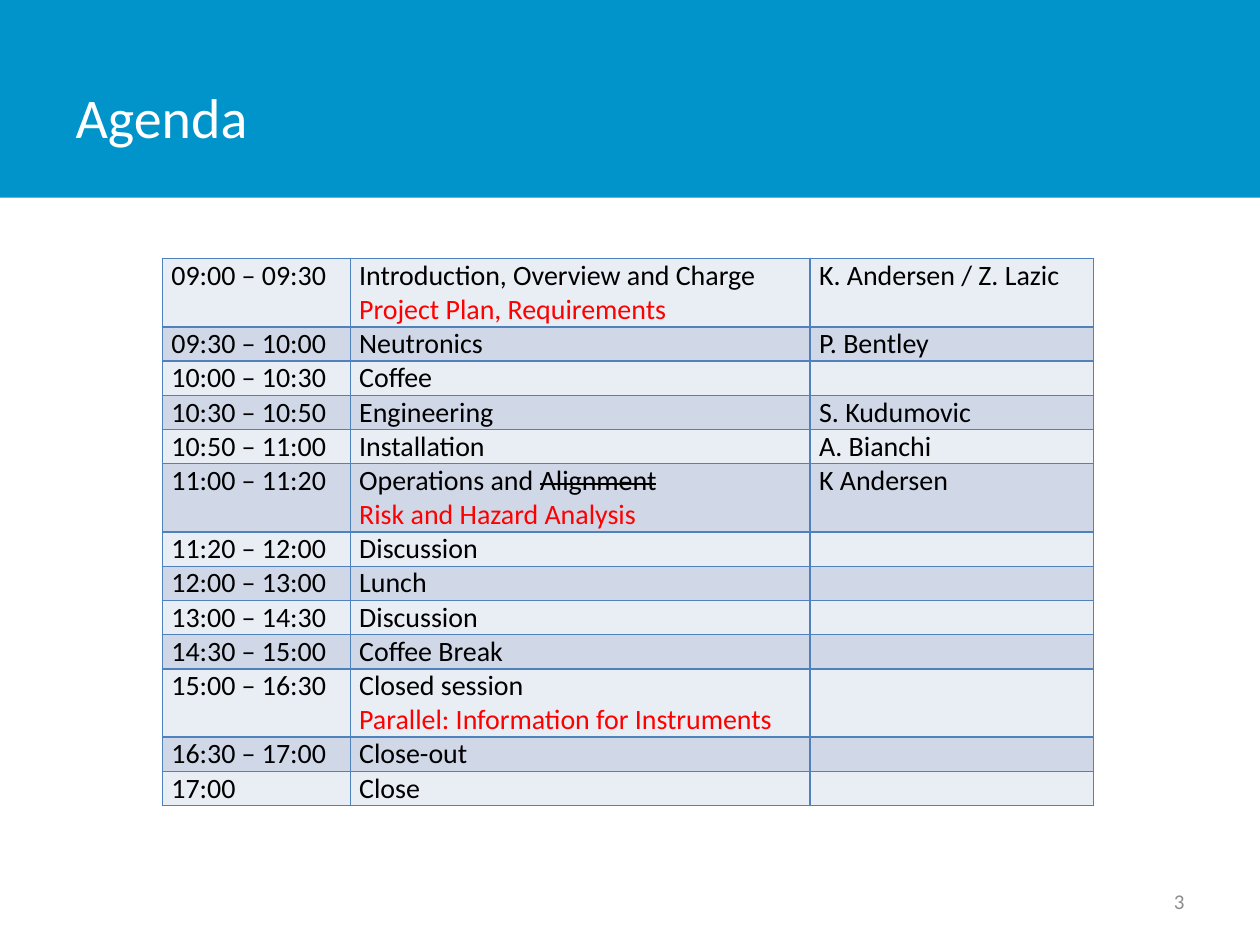
import pptx
import pptx.dml.color
import pptx.enum.shapes
import pptx.enum.text
import pptx.oxml.ns
import pptx.util
from lxml import etree

Pt = pptx.util.Pt
Color = pptx.dml.color.RGBColor.from_string
Align = pptx.enum.text.PP_ALIGN
Anchor = pptx.enum.text.MSO_ANCHOR
qn = pptx.oxml.ns.qn


class Theme:
    font = "Calibri"
    title_size, table_size, number_size = 32, 16, 12
    band, white, black = "0094CA", "FFFFFF", "000000"
    change, number, border = "FF0000", "8C8C8C", "4F81BD"
    stripes = ("E9EDF4", "D0D8E8")


def add_span(para, text, size, color):
    span = para.add_run()
    span.text = text
    span.font.name = Theme.font
    span.font.size = Pt(size)
    span.font.color.rgb = Color(color)
    return span


def add_borders(cell):
    properties = cell._tc.get_or_add_tcPr()
    for side in ("lnL", "lnR", "lnT", "lnB"):
        line = etree.SubElement(properties, qn(f"a:{side}"), w=str(Pt(1)))
        fill = etree.SubElement(line, qn("a:solidFill"))
        etree.SubElement(fill, qn("a:srgbClr"), val=Theme.border)


# Time, topic, struck-out words, late change, speaker
agenda = [
    ("09:00 – 09:30", "Introduction, Overview and Charge", "",
     "Project Plan, Requirements", "K. Andersen / Z. Lazic"),
    ("09:30 – 10:00", "Neutronics", "", "", "P. Bentley"),
    ("10:00 – 10:30", "Coffee", "", "", ""),
    ("10:30 – 10:50", "Engineering", "", "", "S. Kudumovic"),
    ("10:50 – 11:00", "Installation", "", "", "A. Bianchi"),
    ("11:00 – 11:20", "Operations and ", "Alignment",
     "Risk and Hazard Analysis", "K Andersen"),
    ("11:20 – 12:00", "Discussion", "", "", ""),
    ("12:00 – 13:00", "Lunch", "", "", ""),
    ("13:00 – 14:30", "Discussion", "", "", ""),
    ("14:30 – 15:00", "Coffee Break", "", "", ""),
    ("15:00 – 16:30", "Closed session", "",
     "Parallel: Information for Instruments", ""),
    ("16:30 – 17:00", "Close-out", "", "", ""),
    ("17:00", "Close", "", "", ""),
]

deck = pptx.Presentation()
deck.slide_width, deck.slide_height = Pt(720), Pt(540)
page = deck.slides.add_slide(deck.slide_layouts[5])

# Title on its band
title = page.shapes.title
title.left, title.top, title.width, title.height = Pt(36), Pt(21.6), Pt(562), Pt(90)
title.text_frame.vertical_anchor = Anchor.MIDDLE
para = title.text_frame.paragraphs[0]
para.alignment = Align.LEFT
add_span(para, "Agenda", Theme.title_size, Theme.white)

band = page.shapes.add_shape(
    pptx.enum.shapes.MSO_SHAPE.RECTANGLE, 0, 0, deck.slide_width, Pt(113))
band.shadow.inherit = False
band.fill.solid()
band.fill.fore_color.rgb = Color(Theme.band)
band.line.fill.background()
title.element.addprevious(band.element)

# Slide number
box = page.shapes.add_textbox(Pt(516), Pt(500.5), Pt(168), Pt(28.8))
box.text_frame.word_wrap = True
box.text_frame.vertical_anchor = Anchor.MIDDLE
para = box.text_frame.paragraphs[0]
para.alignment = Align.RIGHT
add_span(para, "3", Theme.number_size, Theme.number)

# Agenda table
widths = (107.3, 262.8, 162)
line_height = 19.54
line_count = sum(2 if entry[3] else 1 for entry in agenda)
table = page.shapes.add_table(
    len(agenda), len(widths), Pt(92.9), Pt(147.8),
    Pt(sum(widths)), Pt(line_count * line_height)).table
table.first_row = table.horz_banding = False
for column, width in zip(table.columns, widths):
    column.width = Pt(width)

for index, (time, topic, struck, change, speaker) in enumerate(agenda):
    row = table.rows[index]
    row.height = Pt(line_height * (2 if change else 1))
    for cell, text in zip(row.cells, (time, topic, speaker)):
        cell.margin_left = cell.margin_right = Pt(5.1)
        cell.margin_top = cell.margin_bottom = 0
        add_borders(cell)
        cell.fill.solid()
        cell.fill.fore_color.rgb = Color(Theme.stripes[index % 2])
        para = cell.text_frame.paragraphs[0]
        para.alignment = Align.JUSTIFY
        if text:
            add_span(para, text, Theme.table_size, Theme.black)
        else:
            # An empty cell must not force its row taller
            etree.SubElement(para._p, qn("a:endParaRPr"),
                             sz=str(Theme.table_size * 100))

    topic_frame = row.cells[1].text_frame
    if struck:
        span = add_span(topic_frame.paragraphs[0], struck,
                        Theme.table_size, Theme.black)
        span._r.get_or_add_rPr().set("strike", "sngStrike")
    if change:
        para = topic_frame.add_paragraph()
        para.alignment = Align.JUSTIFY
        add_span(para, change, Theme.table_size, Theme.change)

deck.save("out.pptx")
